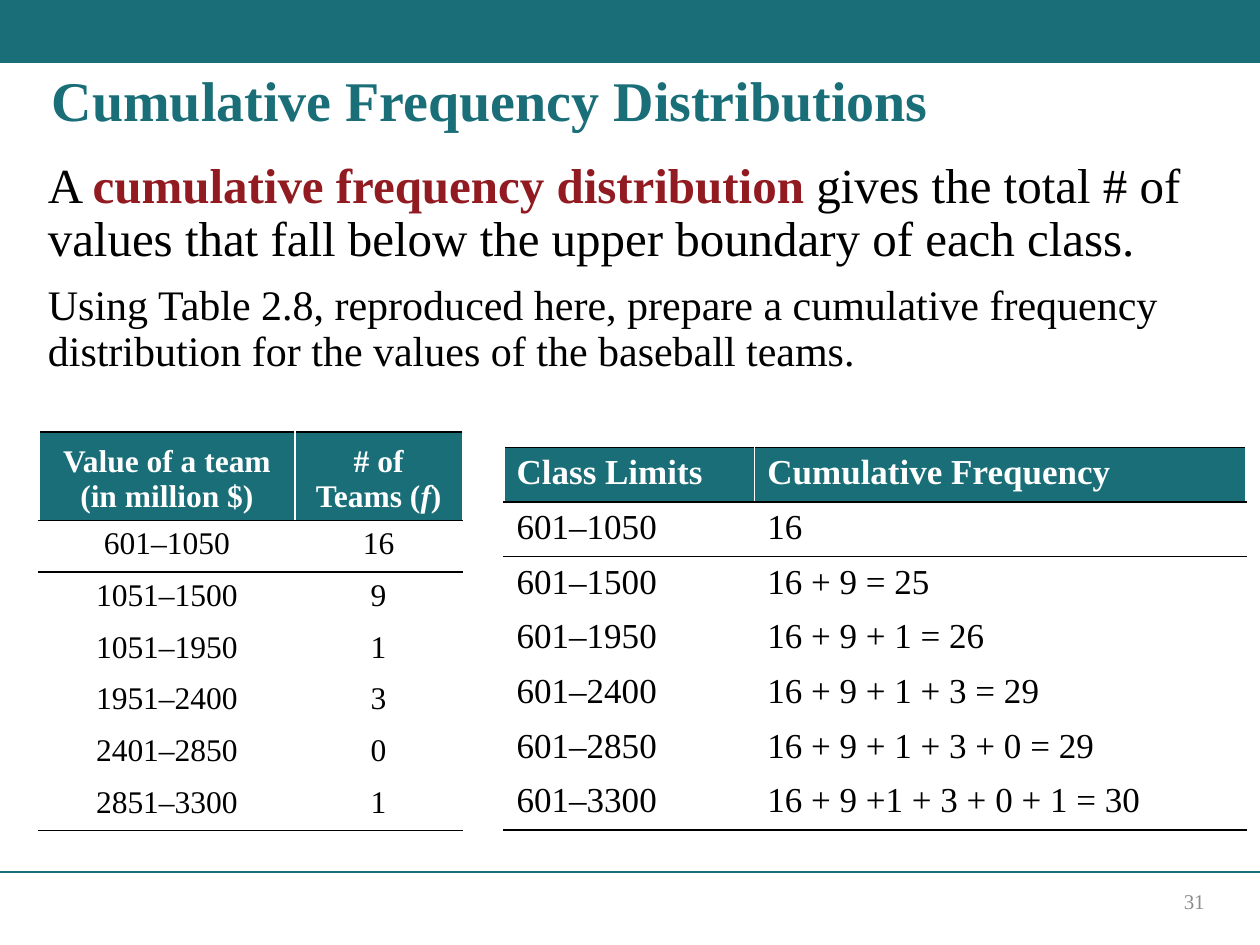
from dataclasses import dataclass

from lxml import etree
from pptx import Presentation
from pptx.dml.color import RGBColor
from pptx.enum import shapes, text
from pptx.oxml.ns import qn
from pptx.util import Inches, Pt

COLORS = {"teal": "196E78", "red": "911B21", "black": "000000",
          "white": "FFFFFF", "gray": "8C8C8C"}
FONT = "Times New Roman"


@dataclass
class Span:
    text: str
    size: int
    color: str = "black"
    bold: bool = False
    italic: bool = False


@dataclass
class Grid:
    left: float
    top: float
    columns: list[float]
    header_height: float
    row_height: float
    size: int
    align: text.PP_ALIGN
    header_anchor: text.MSO_ANCHOR
    header: list[list[Span]]
    rows: list[tuple[str, str]]


def rgb(name: str) -> RGBColor:
    return RGBColor.from_string(COLORS[name])


def place(shape, left: float, top: float, width: float, height: float) -> None:
    values = {"left": left, "top": top, "width": width, "height": height}
    for name, value in values.items():
        setattr(shape, name, Inches(value))


def write(para, spans: list[Span], align=text.PP_ALIGN.LEFT) -> None:
    para.alignment = align
    for span in spans:
        run = para.add_run()
        run.text = span.text
        values = {"name": FONT, "size": Pt(span.size),
                  "bold": span.bold, "italic": span.italic}
        for name, value in values.items():
            setattr(run.font, name, value)
        run.font.color.rgb = rgb(span.color)


def add_rule(cell, side: str) -> None:
    """Draw a black 1 pt border on one side ("T" or "B") of a cell."""
    line = etree.SubElement(cell._tc.get_or_add_tcPr(), qn(f"a:ln{side}"), w="12700")
    fill = etree.SubElement(line, qn("a:solidFill"))
    etree.SubElement(fill, qn("a:srgbClr"), val=COLORS["black"])


def add_grid(page, grid: Grid) -> None:
    body = [[[Span(value, grid.size)] for value in row] for row in grid.rows]
    lines = [grid.header] + body
    heights = [grid.header_height] + [grid.row_height] * len(body)
    frame = page.shapes.add_table(
        len(lines), len(grid.columns), Inches(grid.left), Inches(grid.top),
        Inches(sum(grid.columns)), Inches(sum(heights)))
    table = frame.table
    table.first_row = table.horz_banding = False
    for column, width in zip(table.columns, grid.columns):
        column.width = Inches(width)
    ruled_edges = {0, 1, 2, len(lines)}
    for r, (line, height) in enumerate(zip(lines, heights)):
        table.rows[r].height = Inches(height)
        for c, spans in enumerate(line):
            cell = table.cell(r, c)
            for side, edge in (("T", r), ("B", r + 1)):
                if edge in ruled_edges:
                    add_rule(cell, side)
            if r == 0:
                cell.fill.solid()
                cell.fill.fore_color.rgb = rgb("teal")
                cell.vertical_anchor = grid.header_anchor
            else:
                cell.fill.background()
            write(cell.text_frame.paragraphs[0], spans, grid.align)


def add_frame_lines(page) -> None:
    """Draw the top band and the footer line."""
    band = page.shapes.add_shape(shapes.MSO_SHAPE.RECTANGLE, 0, 0, Inches(10), Inches(0.5))
    band.shadow.inherit = False
    band.fill.solid()
    band.fill.fore_color.rgb = rgb("teal")
    band.line.fill.background()
    rule = page.shapes.add_connector(shapes.MSO_CONNECTOR.STRAIGHT, 0, Inches(6.92),
                                     Inches(10), Inches(6.92))
    rule.line.color.rgb = rgb("teal")
    rule.line.width = Pt(1)
    etree.SubElement(rule._element.spPr, qn("a:effectLst"))


def add_texts(page) -> None:
    title, body = page.placeholders[0], page.placeholders[1]
    place(title, 0.31, 0.51, 9.33, 0.62)
    place(body, 0.28, 1.23, 9.71, 1.82)
    for box in (title, body):
        box.text_frame.auto_size = text.MSO_AUTO_SIZE.NONE
    heading = title.text_frame.paragraphs[0]
    heading.line_spacing = 0.9
    write(heading, [Span("Cumulative Frequency Distributions", 32, "teal", True)])

    paragraphs = [
        [Span("A ", 28),
         Span("cumulative frequency distribution ", 28, "red", True),
         Span("gives the total # of values that fall below the upper boundary "
              "of each class.", 28)],
        [Span("Using Table 2.8, reproduced here, prepare a cumulative frequency "
              "distribution for the values of the baseball teams.", 24)],
    ]
    for i, spans in enumerate(paragraphs):
        para = body.text_frame.add_paragraph() if i else body.text_frame.paragraphs[0]
        props = para._p.get_or_add_pPr()
        props.set("marL", "0")
        props.set("indent", "0")
        etree.SubElement(props, qn("a:buNone"))
        para.line_spacing = 0.9
        para.space_before = Pt(10 if i else 0)
        write(para, spans)

    number = page.shapes.add_textbox(0, 0, 0, 0)
    place(number, 7.06, 6.95, 2.6, 0.4)
    number.text_frame.word_wrap = True
    number.text_frame.vertical_anchor = text.MSO_ANCHOR.MIDDLE
    write(number.text_frame.paragraphs[0], [Span("31", 12, "gray")], text.PP_ALIGN.RIGHT)


def head(label: str, size: int, italic: bool = False) -> Span:
    return Span(label, size, "white", True, italic)


TEAMS = Grid(
    0.31, 3.43, [2.03, 1.33], 0.65, 0.41, 18,
    text.PP_ALIGN.CENTER, text.MSO_ANCHOR.BOTTOM,
    [[head("Value of a team (in million $)", 18)],
     [head("# of Teams (", 18), head("f", 18, True), head(")", 18)]],
    [("601–1050", "16"), ("1051–1500", "9"), ("1051–1950", "1"),
     ("1951–2400", "3"), ("2401–2850", "0"), ("2851–3300", "1")])

CUMULATIVE = Grid(
    4, 3.55, [1.99, 3.9], 0.43, 0.43, 20,
    text.PP_ALIGN.LEFT, text.MSO_ANCHOR.TOP,
    [[head("Class Limits", 20)], [head("Cumulative Frequency", 20)]],
    [("601–1050", "16"), ("601–1500", "16 + 9 = 25"),
     ("601–1950", "16 + 9 + 1 = 26"), ("601–2400", "16 + 9 + 1 + 3 = 29"),
     ("601–2850", "16 + 9 + 1 + 3 + 0 = 29"),
     ("601–3300", "16 + 9 +1 + 3 + 0 + 1 = 30")])


def main() -> None:
    deck = Presentation()
    deck.slide_width, deck.slide_height = Inches(10), Inches(7.5)
    page = deck.slides.add_slide(deck.slide_layouts[1])
    add_frame_lines(page)
    add_texts(page)
    for grid in (TEAMS, CUMULATIVE):
        add_grid(page, grid)
    deck.save("out.pptx")


if __name__ == "__main__":
    main()
